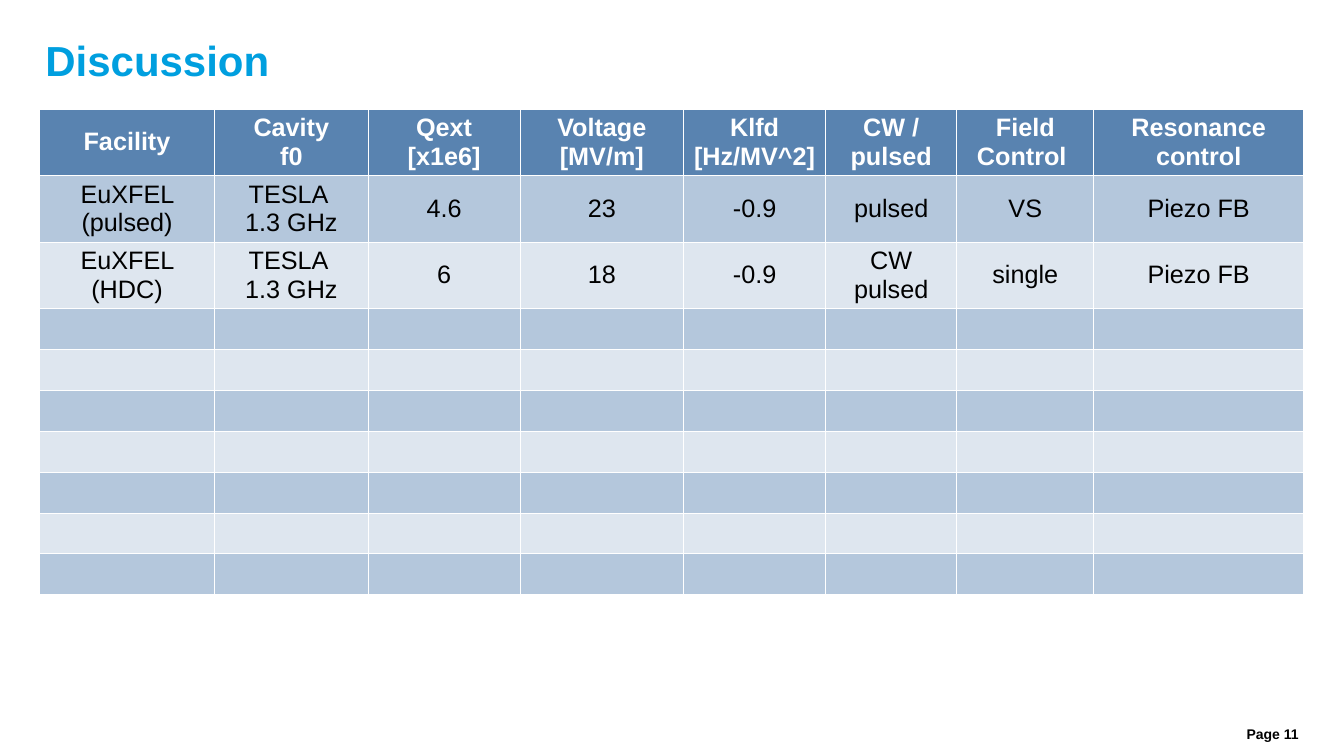
"""Build the discussion slide comparing cavity facilities."""
from dataclasses import dataclass

from lxml import etree
from pptx import Presentation
from pptx import util as u
from pptx.dml.color import RGBColor
from pptx.enum import text as t
from pptx.oxml import ns


@dataclass(frozen=True)
class Theme:
    """Hold the colours, font and type sizes of the slide."""
    font: str = "Arial"
    title_color: str = "009FDF"
    black: str = "000000"
    white: str = "FFFFFF"
    header_fill: str = "5983B0"
    band_fills: tuple = ("B4C7DC", "DEE6EF")
    title_size: float = 30
    table_size: float = 18
    page_size: float = 10
    border_width: float = 0.57


THEME = Theme()
COLUMN_WIDTHS = (1.74, 1.52, 1.51, 1.62, 1.41, 1.3, 1.36, 2.08)
ROW_HEIGHT = 0.4
EMPTY_ROWS = 7
HEADER = ("Facility", "Cavity\nf0", "Qext\n[x1e6]", "Voltage\n[MV/m]",
          "Klfd\n[Hz/MV^2]", "CW / pulsed", "Field Control ", "Resonance control")
FACILITIES = (
    ("EuXFEL (pulsed)", "TESLA \v1.3 GHz", "4.6", "23", "-0.9", "pulsed", "VS", "Piezo FB"),
    ("EuXFEL (HDC)", "TESLA \v1.3 GHz", "6", "18", "-0.9", "CW pulsed", "single", "Piezo FB"),
)


def write_text(frame, content, *, size, color, bold=False,
               align=t.PP_ALIGN.LEFT, line_spacing=None):
    """Fill a text frame and format all of its paragraphs and runs."""
    frame.text = content
    frame.word_wrap = True
    for paragraph in frame.paragraphs:
        paragraph.alignment = align
        paragraph.line_spacing = line_spacing
        for run in paragraph.runs:
            run.font.name = THEME.font
            run.font.size = u.Pt(size)
            run.font.bold = bold
            run.font.color.rgb = RGBColor.from_string(color)


def clear_insets(frame):
    """Remove the inner margins of a text frame and keep its size fixed."""
    frame.margin_left = frame.margin_right = 0
    frame.margin_top = frame.margin_bottom = 0
    frame.auto_size = t.MSO_AUTO_SIZE.NONE


def add_title(slide, content):
    """Place and format the title placeholder."""
    title = slide.shapes.title
    title.left, title.top = u.Inches(0.45), u.Inches(0.38)
    title.width, title.height = u.Inches(12.44), u.Inches(0.49)
    clear_insets(title.text_frame)
    title.text_frame.vertical_anchor = t.MSO_ANCHOR.MIDDLE
    write_text(title.text_frame, content, size=THEME.title_size,
               color=THEME.title_color, bold=True, line_spacing=0.9)


def add_page_label(slide, content):
    """Add the page label at the lower right."""
    label = slide.shapes.add_textbox(u.Inches(11.86), u.Inches(7.2),
                                     u.Inches(1.02), u.Inches(0.2))
    clear_insets(label.text_frame)
    write_text(label.text_frame, content, size=THEME.page_size,
               color=THEME.black, bold=True, align=t.PP_ALIGN.RIGHT)


def add_borders(cell):
    """Draw a thin line on each side of a cell."""
    properties = cell._tc.get_or_add_tcPr()
    for position, side in enumerate(("lnL", "lnR", "lnT", "lnB")):
        line = etree.Element(ns.qn(f"a:{side}"), w=str(u.Pt(THEME.border_width)))
        fill = etree.SubElement(line, ns.qn("a:solidFill"))
        etree.SubElement(fill, ns.qn("a:srgbClr"), val=THEME.white)
        properties.insert(position, line)


def format_cell(cell, content, *, fill, color, bold):
    """Fill, frame and write one table cell."""
    cell.fill.solid()
    cell.fill.fore_color.rgb = RGBColor.from_string(fill)
    add_borders(cell)
    cell.vertical_anchor = t.MSO_ANCHOR.MIDDLE
    cell.margin_left = cell.margin_right = u.Inches(0.04)
    cell.margin_top = cell.margin_bottom = u.Inches(0.05)
    if content:
        write_text(cell.text_frame, content, size=THEME.table_size,
                   color=color, bold=bold, align=t.PP_ALIGN.CENTER)


def add_facility_table(slide):
    """Add the facility table with its header, data and empty rows."""
    columns = len(COLUMN_WIDTHS)
    rows = (HEADER, *FACILITIES, *[("",) * columns] * EMPTY_ROWS)
    table = slide.shapes.add_table(
        len(rows), columns, u.Inches(0.39), u.Inches(1.08),
        u.Inches(sum(COLUMN_WIDTHS)), u.Inches(ROW_HEIGHT * len(rows))).table
    table.horz_banding = False
    for column, width in zip(table.columns, COLUMN_WIDTHS):
        column.width = u.Inches(width)
    for row_index, values in enumerate(rows):
        is_header = row_index == 0
        fill = THEME.header_fill if is_header else THEME.band_fills[(row_index - 1) % 2]
        color = THEME.white if is_header else THEME.black
        for column_index, content in enumerate(values):
            format_cell(table.cell(row_index, column_index), content,
                        fill=fill, color=color, bold=is_header)


def main():
    """Build and save the presentation."""
    presentation = Presentation()
    presentation.slide_width = u.Inches(13.33)
    presentation.slide_height = u.Inches(7.5)
    slide = presentation.slides.add_slide(presentation.slide_layouts[5])
    add_page_label(slide, "Page 11")
    add_title(slide, "Discussion")
    add_facility_table(slide)
    presentation.save("out.pptx")


if __name__ == "__main__":
    main()
